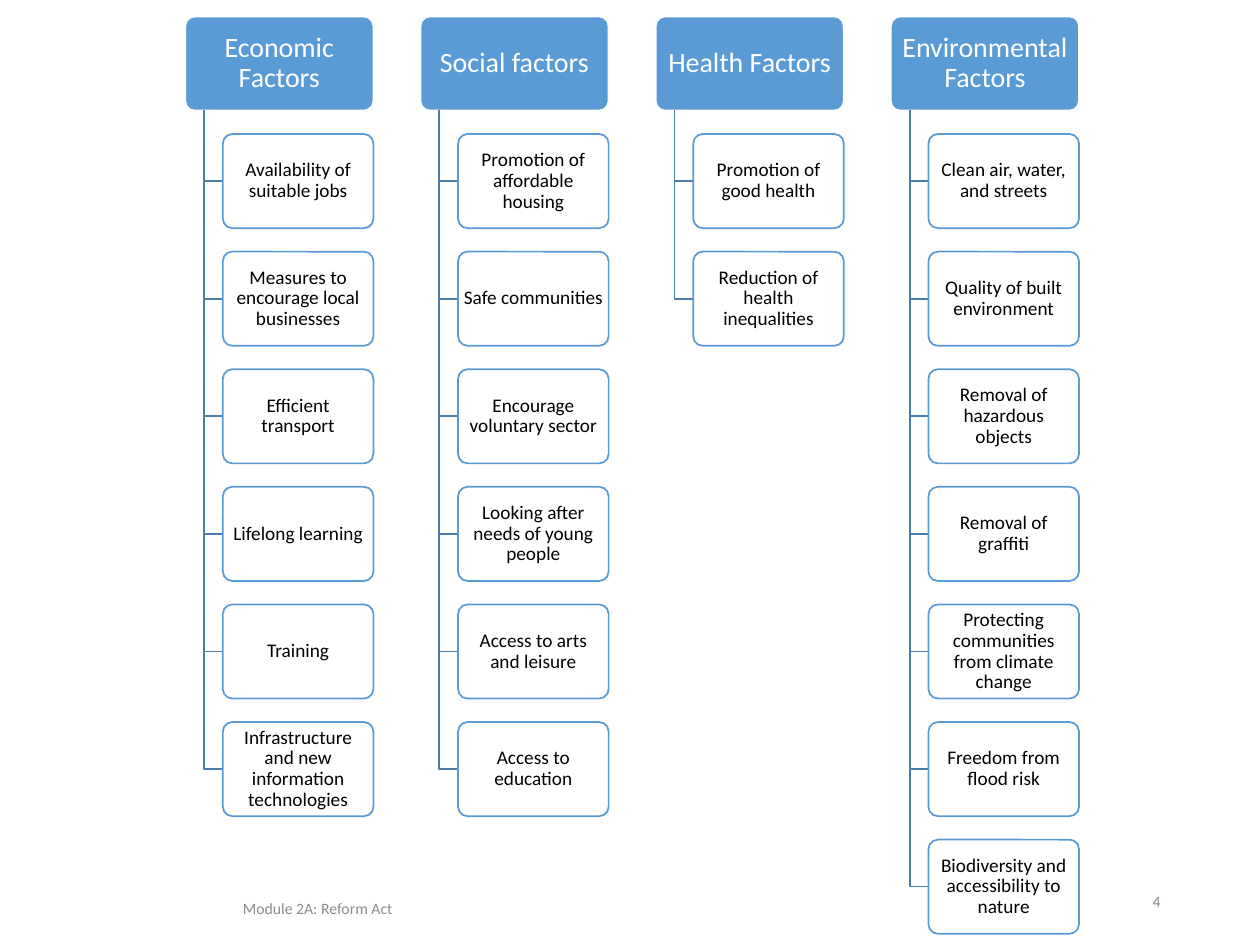
import pptx
import pptx.util
import pptx.dml.color
import pptx.enum.shapes
import pptx.enum.text
import pptx.oxml.ns
from lxml import etree

Pt = pptx.util.Pt
RGBColor = pptx.dml.color.RGBColor
ALIGN = pptx.enum.text.PP_ALIGN

BLUE = RGBColor(0x5B, 0x9B, 0xD5)
BRANCH_BLUE = RGBColor(0x49, 0x7C, 0xAB)
WHITE = RGBColor(0xFF, 0xFF, 0xFF)
BLACK = RGBColor(0, 0, 0)
GREY = RGBColor(0x8C, 0x8C, 0x8C)

LEFT, TOP = 105.9, 9.4
COLUMN_STEP, ROW_STEP = 134.4, 67.2
HEADING_WIDTH, FACTOR_WIDTH, BOX_HEIGHT = 107.5, 86, 53.76
FACTOR_INDENT = HEADING_WIDTH - FACTOR_WIDTH

FACTORS = {
    "Economic Factors": [
        "Availability of suitable jobs",
        "Measures to encourage local businesses",
        "Efficient transport",
        "Lifelong learning",
        "Training",
        "Infrastructure and new information technologies",
    ],
    "Social factors": [
        "Promotion of affordable housing",
        "Safe communities",
        "Encourage voluntary sector",
        "Looking after needs of young people",
        "Access to arts and leisure",
        "Access to education",
    ],
    "Health Factors": [
        "Promotion of good health",
        "Reduction of health inequalities",
    ],
    "Environmental Factors": [
        "Clean air, water, and streets",
        "Quality of built environment",
        "Removal of hazardous objects",
        "Removal of graffiti",
        "Protecting communities from climate change",
        "Freedom from flood risk",
        "Biodiversity and accessibility to nature",
    ],
}


class FactorSlide:
    """Holds the style and the slide, and draws each kind of element."""

    font_name = "Calibri"
    line_width = Pt(1)

    def __init__(self, slide):
        self.slide = slide

    def add_wording(self, frame, wording, size, color, align, spacing=1.0):
        frame.word_wrap = True
        frame.vertical_anchor = pptx.enum.text.MSO_ANCHOR.MIDDLE
        paragraph = frame.paragraphs[0]
        paragraph.alignment = align
        paragraph.line_spacing = spacing
        run = paragraph.add_run()
        run.text = wording
        run.font.name = self.font_name
        run.font.size = Pt(size)
        run.font.color.rgb = color

    def box(self, wording, left, top, width, fill, line, size, color, side_inset, opacity=100):
        box = self.slide.shapes.add_shape(
            pptx.enum.shapes.MSO_SHAPE.ROUNDED_RECTANGLE,
            Pt(left), Pt(top), Pt(width), Pt(BOX_HEIGHT))
        box.adjustments[0] = 0.1
        box.shadow.inherit = False
        box.fill.solid()
        box.fill.fore_color.rgb = fill
        if opacity < 100:
            tint = box.element.spPr.find(
                pptx.oxml.ns.qn("a:solidFill") + "/" + pptx.oxml.ns.qn("a:srgbClr"))
            etree.SubElement(tint, pptx.oxml.ns.qn("a:alpha"), val=str(opacity * 1000))
        box.line.color.rgb = line
        box.line.width = self.line_width
        frame = box.text_frame
        frame.margin_left = frame.margin_right = Pt(side_inset)
        frame.margin_top = frame.margin_bottom = Pt(1.4)
        self.add_wording(frame, wording, size, color, ALIGN.CENTER, 0.9)

    def heading(self, wording, left):
        self.box(wording, left, TOP, HEADING_WIDTH, BLUE, WHITE, 16, WHITE, 2.2)

    def factor(self, wording, left, top):
        self.box(wording, left, top, FACTOR_WIDTH, WHITE, BLUE, 11, BLACK, 1.4, 90)

    def branch(self, left, top, right, bottom):
        builder = self.slide.shapes.build_freeform(Pt(left), Pt(top))
        builder.add_line_segments(
            [(Pt(left), Pt(bottom)), (Pt(right), Pt(bottom))], close=False)
        branch = builder.convert_to_shape()
        branch.shadow.inherit = False
        branch.fill.background()
        branch.line.color.rgb = BRANCH_BLUE
        branch.line.width = self.line_width

    def footer(self, wording, left, top, width, align):
        footer = self.slide.shapes.add_textbox(Pt(left), Pt(top), Pt(width), Pt(28.8))
        self.add_wording(footer.text_frame, wording, 9, GREY, align)


def main():
    deck = pptx.Presentation()
    deck.slide_width, deck.slide_height = Pt(720), Pt(540)
    page = FactorSlide(deck.slides.add_slide(deck.slide_layouts[6]))

    for column, (heading, factors) in enumerate(FACTORS.items()):
        left = LEFT + column * COLUMN_STEP
        factor_left = left + FACTOR_INDENT
        page.heading(heading, left)
        for row, factor in enumerate(factors, start=1):
            top = TOP + row * ROW_STEP
            page.branch(left + FACTOR_INDENT / 2, TOP + BOX_HEIGHT,
                        factor_left, top + BOX_HEIGHT / 2)
            page.factor(factor, factor_left, top)

    page.footer("Module 2A: Reform Act", 59.8, 504.7, 243.4, ALIGN.CENTER)
    page.footer("4", 508.3, 500.4, 162, ALIGN.RIGHT)
    deck.save("out.pptx")


if __name__ == "__main__":
    main()
